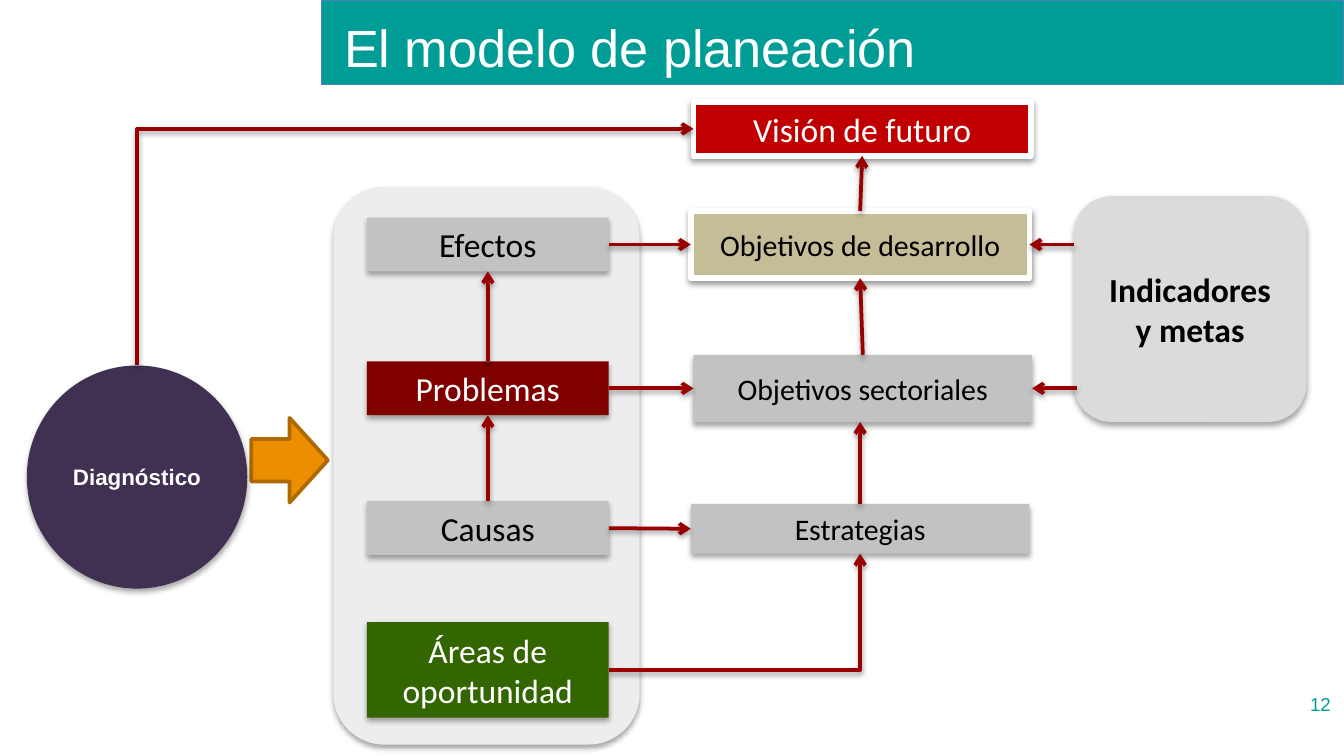
"""Build the planning model slide: diagnosis, problem tree, objectives and indicators."""
from lxml import etree
from pptx import Presentation
from pptx.dml.color import RGBColor
from pptx.enum import shapes as kinds, text as typo
from pptx.oxml import ns
from pptx.util import Inches, Pt

THEME = {
    "teal": "009D96", "bar_edge": "4B7EBC", "white": "FFFFFF", "black": "000000",
    "panel": "EDEDED", "grey": "C2C2C2", "light": "DBDBDB", "maroon": "800000",
    "green": "336600", "tan": "C4BD97", "red": "C00000", "purple": "403152",
    "orange": "EB8F00", "orange_edge": "AE6A00", "arrow": "990000",
    "title": 28, "large": 18, "medium": 16, "small": 12, "number": 10,
    "heading_font": "Arial", "body_font": "Calibri",
}
BOX_SHADOW = {"alpha": 35, "blur": 3.1, "dist": 1.8}
LINE_SHADOW = {"alpha": 38, "blur": 3.1, "dist": 1.6}
TOP, LEFT, BOTTOM, RIGHT = range(4)
RECT, ROUND = kinds.MSO_SHAPE.RECTANGLE, kinds.MSO_SHAPE.ROUNDED_RECTANGLE

TREE_LEFT, TREE_WIDTH = 2.73, 1.8
TREE = [
    ("Efectos", 1.62, 0.4, "grey", "black"),
    ("Problemas", 2.69, 0.4, "maroon", "white"),
    ("Causas", 3.73, 0.4, "grey", "black"),
    ("Áreas de oportunidad", 4.63, 0.71, "green", "white"),
]
GOALS = [
    ("Visión de futuro", (5.16, 0.76, 2.51, 0.4), "red", "white", "large", "white"),
    ("Objetivos de desarrollo", (5.14, 1.57, 2.52, 0.5), "tan", "black", "medium", "white"),
    ("Objetivos sectoriales", (5.16, 2.64, 2.52, 0.5), "grey", "black", "medium", None),
    ("Estrategias", (5.14, 3.75, 2.52, 0.37), "grey", "black", "medium", None),
]
LINKS = [
    ("Causas", TOP, "Problemas", BOTTOM),
    ("Problemas", TOP, "Efectos", BOTTOM),
    ("Efectos", RIGHT, "Objetivos de desarrollo", LEFT),
    ("Problemas", RIGHT, "Objetivos sectoriales", LEFT),
    ("Causas", RIGHT, "Estrategias", LEFT),
    ("Objetivos sectoriales", TOP, "Objetivos de desarrollo", BOTTOM),
    ("Objetivos de desarrollo", TOP, "Visión de futuro", BOTTOM),
]
INDICATOR_LINKS = [(7.99, 1.82, "Objetivos de desarrollo"), (8.01, 2.89, "Objetivos sectoriales")]


def color(key):
    return RGBColor.from_string(THEME[key])


def write(frame, words, size, ink, font="body_font", bold=False, align=typo.PP_ALIGN.CENTER):
    frame.word_wrap = True
    frame.vertical_anchor = typo.MSO_ANCHOR.MIDDLE
    paragraph = frame.paragraphs[0]
    paragraph.alignment = align
    run = paragraph.add_run()
    run.text = words
    run.font.name, run.font.size, run.font.bold = THEME[font], Pt(THEME[size]), bold
    run.font.color.rgb = color(ink)


def cast_shadow(properties, shadow):
    effects = properties.find(ns.qn("a:effectLst"))
    if effects is None:
        effects = etree.SubElement(properties, ns.qn("a:effectLst"))
    outer = etree.SubElement(
        effects, ns.qn("a:outerShdw"), blurRad=str(Pt(shadow["blur"])),
        dist=str(Pt(shadow["dist"])), dir="5400000", rotWithShape="0")
    tint = etree.SubElement(outer, ns.qn("a:srgbClr"), val=THEME["black"])
    etree.SubElement(tint, ns.qn("a:alpha"), val=str(shadow["alpha"] * 1000))


def add_box(slide, kind, place, fill, edge=None, width=0, shadow=BOX_SHADOW):
    box = slide.shapes.add_shape(kind, *map(Inches, place))
    box.fill.solid()
    box.fill.fore_color.rgb = color(fill)
    if edge:
        box.line.color.rgb = color(edge)
        box.line.width = Pt(width)
    else:
        box.line.fill.background()
    box.shadow.inherit = False
    if shadow:
        cast_shadow(box._element.spPr, shadow)
    return box


def add_arrow(slide, target, target_side, source=None, source_side=TOP, start=(0, 0), bent=False):
    kind = kinds.MSO_CONNECTOR.ELBOW if bent else kinds.MSO_CONNECTOR.STRAIGHT
    x, y = map(Inches, start)
    arrow = slide.shapes.add_connector(kind, x, y, x, y)
    if source is not None:
        arrow.begin_connect(source, source_side)
    arrow.end_connect(target, target_side)
    arrow.line.color.rgb = color("arrow")
    arrow.line.width = Pt(2)
    properties = arrow._element.spPr
    etree.SubElement(arrow.line._get_or_add_ln(), ns.qn("a:tailEnd"), type="arrow")
    cast_shadow(properties, LINE_SHADOW)
    if bent:
        properties.find(ns.qn("a:prstGeom")).set("prst", "bentConnector2")
    return arrow


def turn_upright(arrow):
    """Make an elbow leave its source upwards, then run to the right."""
    across, rise = arrow.width, arrow.height
    shift = (across - rise) // 2
    arrow.left, arrow.top = arrow.left + shift, arrow.top - shift
    arrow.width, arrow.height = rise, across
    frame = arrow._element.spPr.find(ns.qn("a:xfrm"))
    for name, value in (("rot", "5400000"), ("flipH", "1"), ("flipV", "1")):
        frame.set(name, value)


def main():
    deck = Presentation()
    deck.slide_width = Inches(10)
    deck.slide_height = deck.slide_width * 9 // 16
    slide = deck.slides.add_slide(deck.slide_layouts[5])

    add_box(slide, RECT, (2.39, 0, 7.61, 0.63), "teal", "bar_edge", 0.75, None)
    title = slide.shapes.title
    title.left, title.top, title.width, title.height = map(Inches, (2.46, -0.03, 7.41, 0.75))
    write(title.text_frame, "El modelo de planeación", "title", "white", "heading_font",
          align=typo.PP_ALIGN.LEFT)
    slide.shapes._spTree.append(title._element)
    number = slide.shapes.add_textbox(*map(Inches, (9.5, 5.09, 0.5, 0.3)))
    write(number.text_frame, "12", "number", "teal", "heading_font", align=typo.PP_ALIGN.RIGHT)

    add_box(slide, ROUND, (2.48, 1.39, 2.28, 4.15), "panel")
    add_box(slide, kinds.MSO_SHAPE.RIGHT_ARROW, (1.87, 3.11, 0.57, 0.63),
            "orange", "orange_edge", 2, None)
    boxes = {}
    for words, top, height, fill, ink in TREE:
        boxes[words] = add_box(slide, RECT, (TREE_LEFT, top, TREE_WIDTH, height), fill)
        write(boxes[words].text_frame, words, "large", ink)
    for words, place, fill, ink, size, edge in GOALS:
        boxes[words] = add_box(slide, RECT, place, fill, edge, 3,
                               LINE_SHADOW if edge else BOX_SHADOW)
        write(boxes[words].text_frame, words, size, ink)
    indicators = add_box(slide, ROUND, (7.99, 1.46, 1.73, 1.68), "light")
    write(indicators.text_frame, "Indicadores y metas", "large", "black", bold=True)
    diagnosis = add_box(slide, kinds.MSO_SHAPE.OVAL, (0.2, 2.72, 1.64, 1.66), "purple")
    write(diagnosis.text_frame, "Diagnóstico", "small", "white", "heading_font", bold=True)

    for source, source_side, target, target_side in LINKS:
        add_arrow(slide, boxes[target], target_side, boxes[source], source_side)
    for x, y, target in INDICATOR_LINKS:
        add_arrow(slide, boxes[target], RIGHT, start=(x, y))
    strategies = boxes["Estrategias"]
    rise = add_arrow(slide, boxes["Objetivos sectoriales"], BOTTOM, strategies, TOP)
    rise.end_x = rise.begin_x
    add_arrow(slide, strategies, BOTTOM, boxes["Áreas de oportunidad"], RIGHT, bent=True)
    turn_upright(add_arrow(slide, boxes["Visión de futuro"], LEFT, diagnosis, TOP, bent=True))
    deck.save("out.pptx")


if __name__ == "__main__":
    main()
